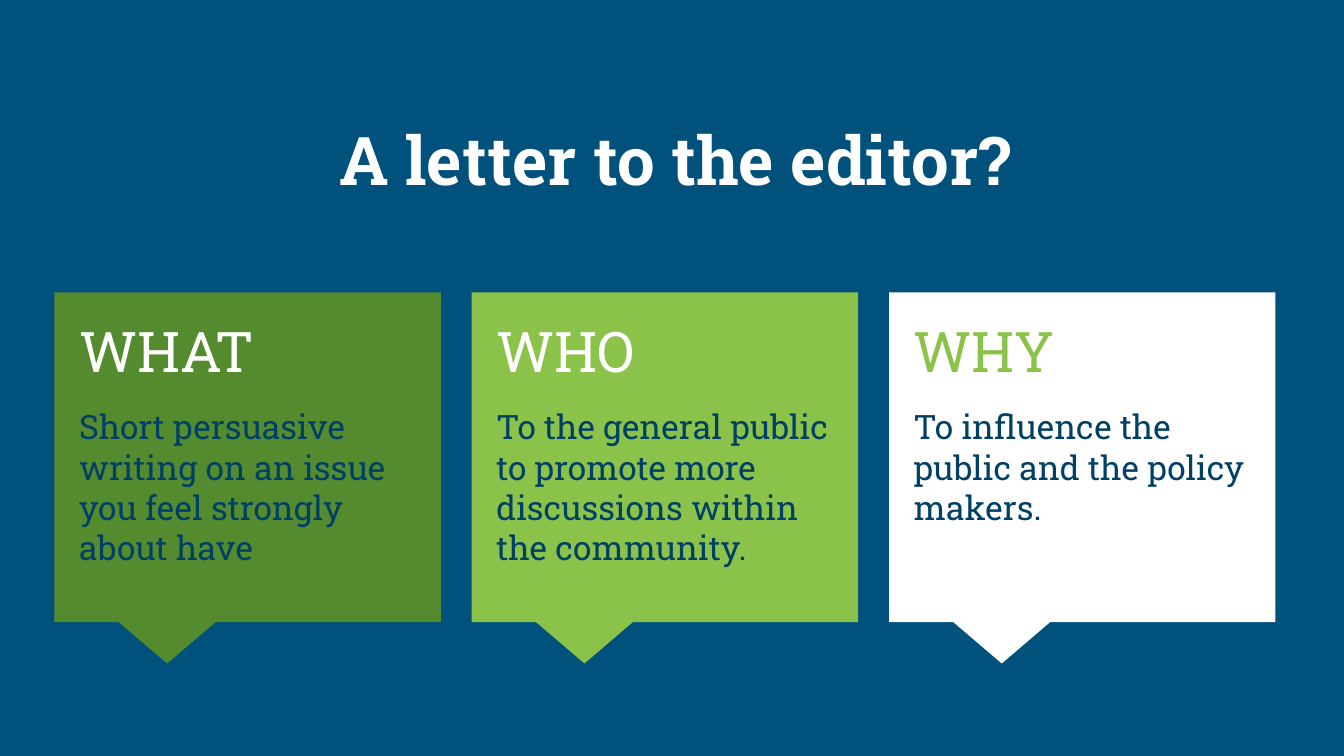
from pptx import Presentation
from pptx.dml.color import RGBColor
from pptx.enum.shapes import MSO_SHAPE as Shape
from pptx.enum.text import MSO_ANCHOR as Anchor, PP_ALIGN as Align
from pptx.util import Pt

PX = 4572  # 200 px to the inch
FONT = "Roboto Slab"
COLORS = {
    "background": "00517C",
    "navy": "004065",
    "dark_green": "558B2F",
    "light_green": "8BC34A",
    "white": "FFFFFF",
}


def color(name):
    return RGBColor.from_string(COLORS[name])


def add_text(box, paragraphs, align=Align.LEFT):
    """Fill a text box; each paragraph is (text, size, color name, bold, space before)."""
    frame = box.text_frame
    frame.word_wrap = True
    frame.vertical_anchor = Anchor.TOP
    frame.margin_left = frame.margin_right = 20 * PX
    frame.margin_top = frame.margin_bottom = 20 * PX
    for index, (text, size, color_name, bold, space_before) in enumerate(paragraphs):
        paragraph = frame.add_paragraph() if index else frame.paragraphs[0]
        paragraph.alignment = align
        paragraph.space_before = Pt(space_before)
        run = paragraph.add_run()
        run.text = text
        run.font.name = FONT
        run.font.size = Pt(size)
        run.font.bold = bold
        run.font.color.rgb = color(color_name)


presentation = Presentation()
presentation.slide_width = 2000 * PX
presentation.slide_height = 1125 * PX
slide = presentation.slides.add_slide(presentation.slide_layouts[6])
slide.background.fill.solid()
slide.background.fill.fore_color.rgb = color("background")

title = slide.shapes.add_textbox(62 * PX, 156 * PX, 1886 * PX, 224 * PX)
add_text(title, [("A letter to the editor?", 36, "white", True, 0)], align=Align.CENTER)

cards = [
    ("WHAT", "Short persuasive writing on an issue you feel strongly about have",
     "dark_green", "white"),
    ("WHO", "To the general public to promote more discussions within the community.",
     "light_green", "white"),
    ("WHY", "To influence the public and the policy makers.",
     "white", "light_green"),
]
CARD_LEFT, CARD_STEP = 81, 621

for index, (heading, body, fill_color, heading_color) in enumerate(cards):
    left = CARD_LEFT + index * CARD_STEP
    callout = slide.shapes.add_shape(
        Shape.RECTANGULAR_CALLOUT, left * PX, 435 * PX, 575 * PX, 491 * PX)
    callout.adjustments[0] = -5 / 24
    callout.adjustments[1] = 5 / 8
    callout.shadow.inherit = False
    callout.fill.solid()
    callout.fill.fore_color.rgb = color(fill_color)
    callout.line.fill.background()

    box = slide.shapes.add_textbox((left + 17) * PX, 451 * PX, 542 * PX, 438 * PX)
    add_text(box, [(heading, 30, heading_color, False, 0),
                   (body, 18, "navy", False, 12)])

presentation.save("out.pptx")
